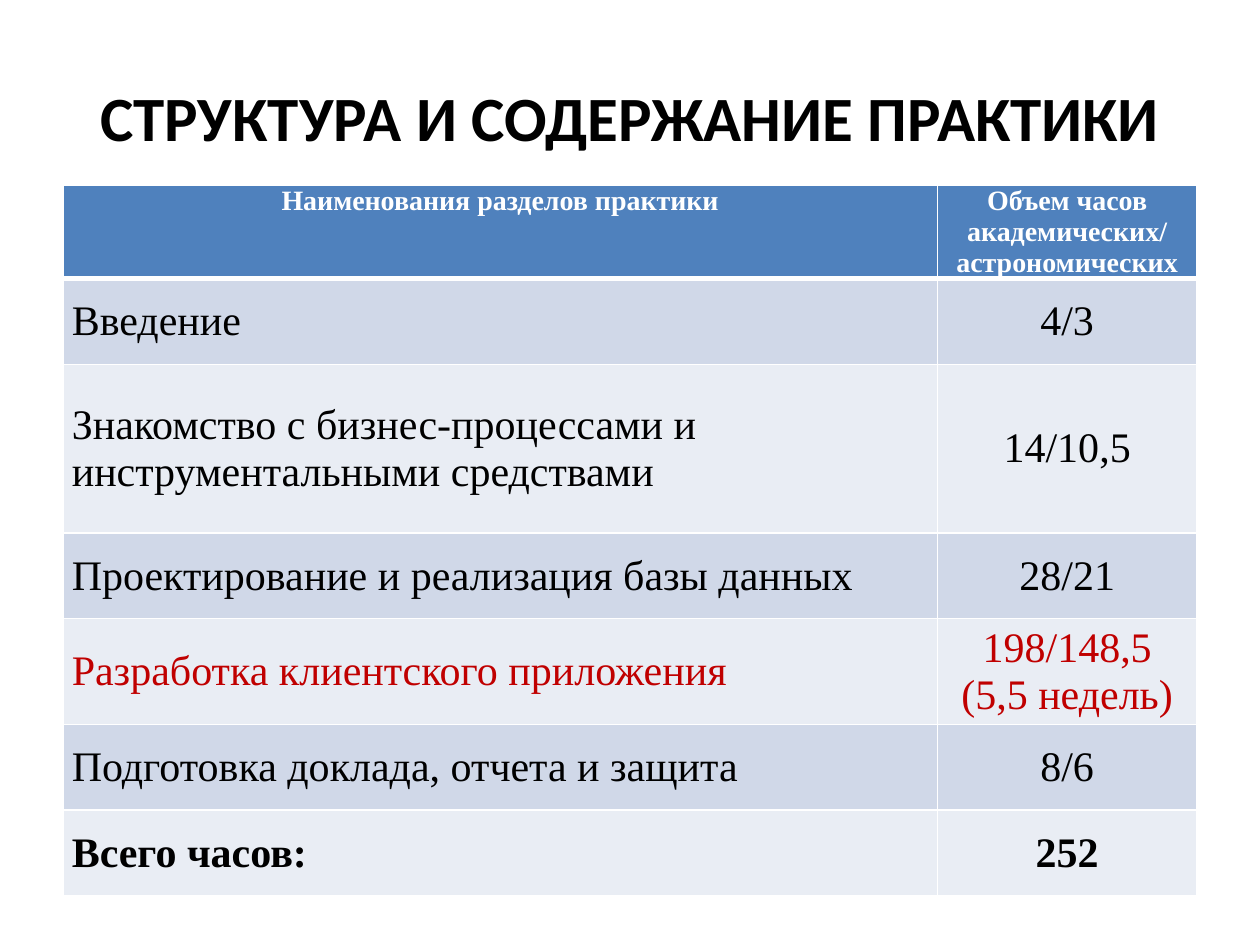
import pptx
import pptx.util
import pptx.dml.color
import pptx.enum.text
import pptx.oxml
import pptx.oxml.ns

Inches, Pt = pptx.util.Inches, pptx.util.Pt
Align, Anchor = pptx.enum.text.PP_ALIGN, pptx.enum.text.MSO_ANCHOR

HUES = {"head": "4F81BD", "odd": "D0D8E8", "even": "E9EDF4",
        "text": "000000", "light": "FFFFFF", "key": "C00000"}
WIDE, HIGH = Inches(10), Inches(7.5)

# Row height, section and hours; a newline starts a paragraph
ROWS = [
    (0.73, "Наименования разделов практики",
     "Объем часов академических/\nастрономических"),
    (0.68, "Введение", "4/3"),
    (1.34, "Знакомство с бизнес-процессами и инструментальными средствами",
     "14/10,5"),
    (0.68, "Проектирование и реализация базы данных", "28/21"),
    (0.84, "Разработка клиентского приложения", "198/148,5\n(5,5 недель)"),
    (0.68, "Подготовка доклада, отчета и защита", "8/6"),
    (0.68, "Всего часов:", "252"),
]
COLS = [6.94, 2.06]
KEY, LAST = 4, len(ROWS) - 1

BODY = {"name": "Times New Roman", "size": Pt(24), "bold": False}
HEAD = BODY | {"size": Pt(16), "bold": True}
TITLE = {"name": "Calibri", "size": Pt(36), "bold": True}
CELL = {"margin_left": Inches(0.07), "margin_right": Inches(0.07),
        "margin_top": 0, "margin_bottom": 0}


def rgb(hue):
    return pptx.dml.color.RGBColor.from_string(HUES[hue])


def apply(item, form):
    for name, value in form.items():
        setattr(item, name, value)


def write(frame, text, form, hue, align):
    frame.text = text
    for para in frame.paragraphs:
        para.alignment = align
        for run in para.runs:
            apply(run.font, form)
            run.font.color.rgb = rgb(hue)


def edge(cell, low):
    """Draw the four cell borders; low is the bottom width in points."""
    props = cell._tc.get_or_add_tcPr()
    for spot, (side, width) in enumerate(zip("LRTB", (1, 1, 1, low))):
        props.insert(spot, pptx.oxml.parse_xml(
            f'<a:ln{side} {pptx.oxml.ns.nsdecls("a")} w="{Pt(width)}">'
            f'<a:solidFill><a:srgbClr val="{HUES["light"]}"/></a:solidFill>'
            f'</a:ln{side}>'))


def add_title(slide, box):
    title = slide.shapes.title
    apply(title, dict(zip(("left", "top", "width", "height"), box)))
    title.text_frame.vertical_anchor = Anchor.MIDDLE
    write(title.text_frame, "СТРУКТУРА И СОДЕРЖАНИЕ ПРАКТИКИ",
          TITLE, "text", Align.CENTER)


def add_hours(slide, box):
    table = slide.shapes.add_table(len(ROWS), len(COLS), *box).table
    for col, share in zip(table.columns, COLS):
        col.width = int(box[2] * share / sum(COLS))
    total = sum(row[0] for row in ROWS)
    for r, (tall, *texts) in enumerate(ROWS):
        table.rows[r].height = int(box[3] * tall / total)
        first = r == 0
        fill = "head" if first else "odd" if r % 2 else "even"
        hue = "light" if first else "key" if r == KEY else "text"
        form = HEAD if first else BODY | {"bold": r == LAST}
        for c, text in enumerate(texts):
            cell = table.cell(r, c)
            apply(cell, CELL)
            cell.vertical_anchor = Anchor.TOP if first else Anchor.MIDDLE
            cell.fill.solid()
            cell.fill.fore_color.rgb = rgb(fill)
            edge(cell, 3 if first else 1)
            align = Align.CENTER if first or c else Align.LEFT
            write(cell.text_frame, text, form, hue, align)


def main():
    deck = pptx.Presentation()
    deck.slide_width, deck.slide_height = WIDE, HIGH
    slide = deck.slides.add_slide(deck.slide_layouts.get_by_name("Title Only"))
    left, width = int(WIDE * 0.05), int(WIDE * 0.9)
    add_title(slide, (left, int(HIGH * 0.04), width, Inches(1.25)))
    add_hours(slide, (left, Inches(1.47), width, Inches(5.63)))
    deck.save("out.pptx")


if __name__ == "__main__":
    main()
